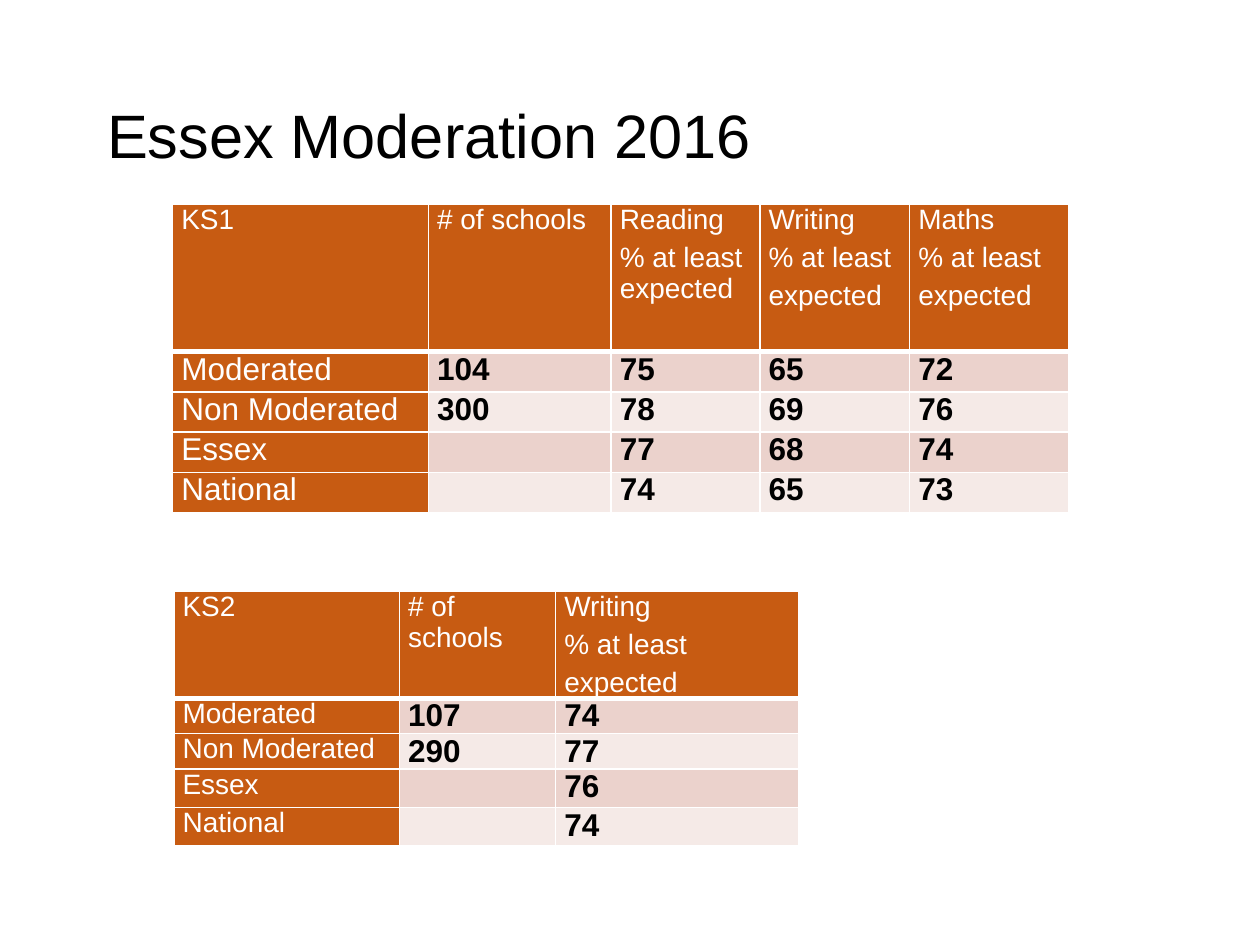
"""Build the Essex Moderation 2016 slide with its KS1 and KS2 tables."""
import pptx
import pptx.dml.color
import pptx.enum.text
import pptx.oxml
import pptx.oxml.ns
import pptx.util
from pptx.util import Inches


def color(value):
    return pptx.dml.color.RGBColor.from_string(value)


def write_text(text_frame, text, size, fill, font="Arial", bold=False, spacing=0):
    for index, line in enumerate(text.split("\n")):
        paragraph = text_frame.paragraphs[0] if index == 0 else text_frame.add_paragraph()
        paragraph.alignment = pptx.enum.text.PP_ALIGN.LEFT
        paragraph.space_before = pptx.util.Pt(spacing if index else 0)
        paragraph.space_after = pptx.util.Pt(spacing)
        run = paragraph.add_run()
        run.text = line
        run.font.name = font
        run.font.size = pptx.util.Pt(size)
        run.font.bold = bold
        run.font.color.rgb = color(fill)


class SlideBuilder:
    accent = "C75B12"
    bands = ("EBD2CC", "F5EAE7")
    white = "FFFFFF"
    black = "000000"

    def __init__(self, slide):
        self.slide = slide

    def title(self, text, left, top, width, height):
        shape = self.slide.shapes.title
        shape.left, shape.top = Inches(left), Inches(top)
        shape.width, shape.height = Inches(width), Inches(height)
        shape.text_frame.vertical_anchor = pptx.enum.text.MSO_ANCHOR.MIDDLE
        write_text(shape.text_frame, text, size=35, fill=self.black)

    def borders(self, cell, bottom):
        properties = cell._tc.get_or_add_tcPr()
        for side, points in (("L", 1), ("R", 1), ("T", 1), ("B", bottom)):
            properties.append(pptx.oxml.parse_xml(
                f'<a:ln{side} {pptx.oxml.ns.nsdecls("a")} w="{pptx.util.Pt(points)}">'
                f'<a:solidFill><a:srgbClr val="{self.white}"/></a:solidFill></a:ln{side}>'))

    def cell(self, cell, text, row, column, label_size):
        header, label = row == 0, column == 0
        self.borders(cell, bottom=3 if header else 1)
        cell.fill.solid()
        cell.fill.fore_color.rgb = color(
            self.accent if header or label else self.bands[(row - 1) % 2])
        cell.margin_left = cell.margin_right = Inches(0.07)
        cell.margin_top = cell.margin_bottom = 0
        if not text:
            return
        if header:
            write_text(cell.text_frame, text, size=16, fill=self.white, spacing=2)
        elif label:
            write_text(cell.text_frame, text, size=label_size, fill=self.white, spacing=2)
        else:
            write_text(cell.text_frame, text, size=18, fill=self.black, bold=True, spacing=2)

    def table(self, rows, left, top, widths, header_height, row_height, label_size):
        heights = [header_height] + [row_height] * (len(rows) - 1)
        table = self.slide.shapes.add_table(
            len(rows), len(widths), Inches(left), Inches(top),
            Inches(sum(widths)), Inches(sum(heights))).table
        table.first_row = table.horz_banding = False
        for column, width in zip(table.columns, widths):
            column.width = Inches(width)
        for row_index, (values, height) in enumerate(zip(rows, heights)):
            table.rows[row_index].height = Inches(height)
            for column_index, text in enumerate(values):
                self.cell(table.cell(row_index, column_index), text,
                          row_index, column_index, label_size)


def main():
    presentation = pptx.Presentation()
    presentation.slide_width, presentation.slide_height = Inches(10), Inches(7.5)
    builder = SlideBuilder(presentation.slides.add_slide(presentation.slide_layouts[5]))
    builder.title("Essex Moderation 2016", 0.75, 0.44, 8.58, 1.25)
    builder.table(
        [("KS1", "# of schools", "Reading\n% at least expected",
          "Writing\n% at least\nexpected", "Maths\n% at least\nexpected"),
         ("Moderated", "104", "75", "65", "72"),
         ("Non Moderated", "300", "78", "69", "76"),
         ("Essex", "", "77", "68", "74"),
         ("National", "", "74", "65", "73")],
        left=1.37, top=1.62, widths=(2.03, 1.45, 1.18, 1.19, 1.26),
        header_height=1.17, row_height=0.32, label_size=18)
    builder.table(
        [("KS2", "# of schools", "Writing\n% at least\nexpected"),
         ("Moderated", "107", "74"),
         ("Non Moderated", "290", "77"),
         ("Essex", "", "76"),
         ("National", "", "74")],
        left=1.38, top=4.69, widths=(1.79, 1.24, 1.93),
        header_height=0.85, row_height=0.28, label_size=16)
    presentation.save("out.pptx")


if __name__ == "__main__":
    main()
